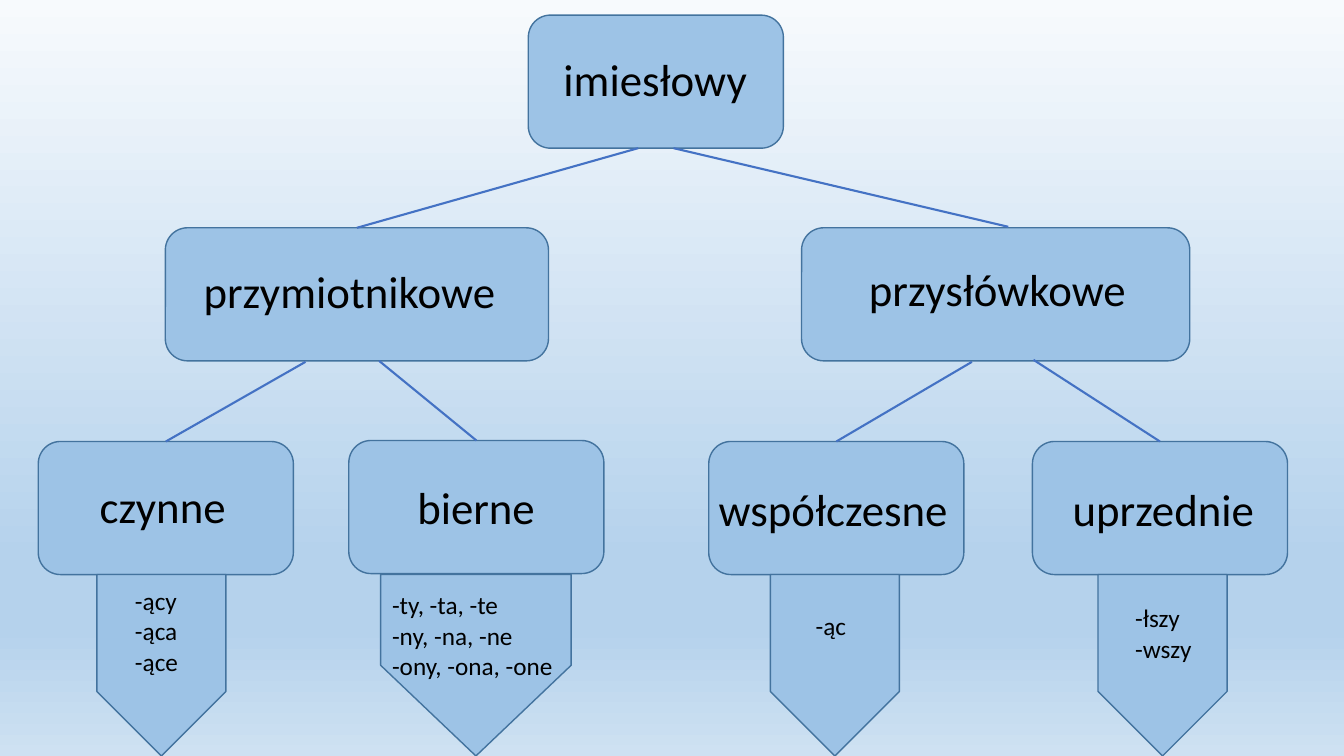
from pptx import Presentation
from pptx.dml.color import RGBColor
from pptx.enum.shapes import MSO_CONNECTOR, MSO_SHAPE
from pptx.oxml import parse_xml
from pptx.oxml.ns import nsdecls, qn
from pptx.util import Inches, Pt
from lxml import etree

ROUND = MSO_SHAPE.ROUNDED_RECTANGLE
ARROW = MSO_SHAPE.PENTAGON
STRAIGHT = MSO_CONNECTOR.STRAIGHT
HIGH = 1.32
LONG = 1.8
TIP = 7.5


def add_box(kind, left, top, width, height):
    box = slide.shapes.add_shape(
        kind, Inches(left), Inches(top), Inches(width), Inches(height))
    box.shadow.inherit = False
    box.fill.solid()
    box.fill.fore_color.rgb = RGBColor.from_string("9DC3E6")
    box.line.color.rgb = RGBColor.from_string("43739E")
    box.line.width = Pt(1)
    return box


def add_label(lines, size, left, top, width, height):
    label = slide.shapes.add_textbox(
        Inches(left), Inches(top), Inches(width), Inches(height))
    frame = label.text_frame
    frame.word_wrap = True
    frame.text = "\n".join(lines)
    for para in frame.paragraphs:
        para.font.name = "Calibri"
        para.font.size = Pt(size)
        para.font.color.rgb = RGBColor.from_string("000000")


deck = Presentation()
deck.slide_width = Inches(13.33)
deck.slide_height = Inches(7.5)
slide = deck.slides.add_slide(deck.slide_layouts[6])

fill = slide.background.fill
fill.gradient()
fill.gradient_angle = 270
stops = fill._fill._gradFill.find(qn("a:gsLst"))
for stop in list(stops):
    stops.remove(stop)
for place, color in [(0, "F7FAFD"), (74, "B5D2EC"), (83, "B5D2EC"), (100, "CEE1F2")]:
    stops.append(parse_xml(
        f'<a:gs {nsdecls("a")} pos="{place * 1000}"><a:srgbClr val="{color}"/></a:gs>'))

nodes = [
    ("imiesłowy", 5.24, 0.15, 2.53, 5.49, 0.46, 2.19),
    ("przymiotnikowe", 1.64, 2.26, 3.8, 1.92, 2.57, 3.32),
    ("przysłówkowe", 7.95, 2.26, 3.85, 8.52, 2.55, 2.78),
    ("czynne", 0.38, 4.38, 2.53, 0.89, 4.7, 1.68),
    ("bierne", 3.46, 4.37, 2.53, 4.04, 4.71, 1.68),
    ("współczesne", 7.03, 4.38, 2.53, 7.03, 4.73, 2.51),
    ("uprzednie", 10.24, 4.38, 2.53, 10.54, 4.73, 2.24),
]
boxes = {}
for name, left, top, width, text_left, text_top, text_width in nodes:
    boxes[name] = add_box(ROUND, left, top, width, HIGH)
    add_label([name], 32, text_left, text_top, text_width, 0.64)

links = [
    (6.33, 1.47, 3.54, 2.26, "przymiotnikowe"),
    (6.68, 1.47, 10, 2.25, None),
    (3.03, 3.59, 1.65, 4.38, "czynne"),
    (3.76, 3.58, 4.73, 4.37, "bierne"),
    (9.64, 3.59, 8.26, 4.38, "współczesne"),
    (10.25, 3.57, 11.5, 4.38, "uprzednie"),
]
for x1, y1, x2, y2, child in links:
    link = slide.shapes.add_connector(
        STRAIGHT, Inches(x1), Inches(y1), Inches(x2), Inches(y2))
    if child:
        link.end_connect(boxes[child], 0)
    link.line.color.rgb = RGBColor.from_string("4472C4")
    link.line.width = Pt(1.5)
    etree.SubElement(link._element.spPr, qn("a:effectLst"))

endings = [
    (["-ący", "-ąca", "-ące"], 1.6, 1.28, 1.24, 5.76, 0.89, 1.01),
    (["-ty, -ta, -te", "-ny, -na, -ne", "-ony, -ona, -one"],
     4.72, 1.89, 3.79, 5.8, 2, 1.01),
    (["-ąc"], 8.28, 1.28, 7.99, 6.01, 0.75, 0.4),
    (["-łszy", "-wszy"], 11.53, 1.28, 11.16, 5.93, 0.78, 0.71),
]
for lines, center, width, *place in endings:
    arrow = add_box(
        ARROW, center - LONG / 2, TIP - LONG / 2 - width / 2, LONG, width)
    arrow.rotation = 90
    add_label(lines, 18, *place)

deck.save("out.pptx")
